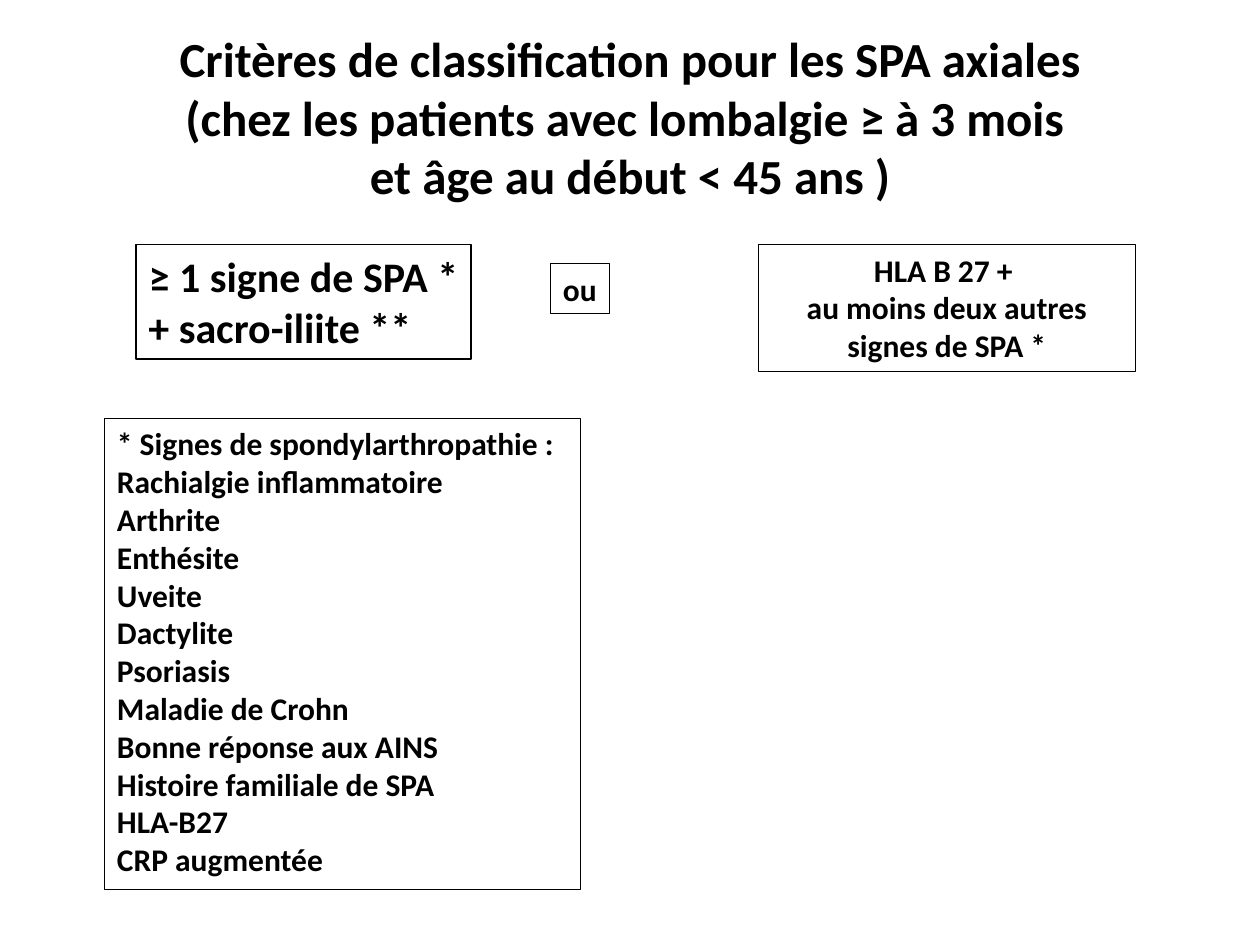
"""Build the slide on classification criteria for axial SPA."""
from pptx import Presentation
from pptx.dml.color import RGBColor
from pptx.enum.shapes import MSO_SHAPE
from pptx.enum.text import MSO_ANCHOR, MSO_AUTO_SIZE, PP_ALIGN
from pptx.util import Inches, Pt

BLACK = RGBColor(0, 0, 0)
LEFT, CENTER = PP_ALIGN.LEFT, PP_ALIGN.CENTER


def format_paragraph(p, size, align):
    p.alignment = align
    p.font.name = "Calibri"
    p.font.size = Pt(size)
    p.font.bold = True
    p.font.color.rgb = BLACK


prs = Presentation()
prs.slide_width, prs.slide_height = Inches(10), Inches(7.5)
s = prs.slides.add_slide(prs.slide_layouts[5])

title = s.shapes.title
title.left, title.top = Inches(0.5), Inches(0.3)
title.width, title.height = Inches(9), Inches(1.25)
tf = title.text_frame
tf.text = (
    "Critères de classification pour les SPA axiales\v"
    "(chez les patients avec lombalgie ≥ à 3 mois \v"
    "et âge au début < 45 ans )"
)
tf.vertical_anchor = MSO_ANCHOR.MIDDLE
tf.auto_size = MSO_AUTO_SIZE.NONE
format_paragraph(tf.paragraphs[0], 28, CENTER)

signs = [
    "* Signes de spondylarthropathie :",
    "Rachialgie inflammatoire",
    "Arthrite",
    "Enthésite",
    "Uveite",
    "Dactylite",
    "Psoriasis",
    "Maladie de Crohn",
    "Bonne réponse aux AINS",
    "Histoire familiale de SPA",
    "HLA-B27",
    "CRP augmentée",
]
hla = ["HLA B 27 + ", "au moins deux autres", "signes de SPA *"]
boxes = [
    ((1.08, 1.94, 2.66, 0.91), 24, [CENTER, LEFT], True,
     ["≥ 1 signe de SPA *", "+ sacro-iliite **"]),
    ((0.83, 3.32, 3.78, 3.74), 18, [LEFT] * len(signs), True, signs),
    ((6.02, 1.94, 2.99, 1.01), 18, [CENTER] * len(hla), True, hla),
    ((4.37, 2.09, 0.47, 0.4), 18, [LEFT], False, ["ou"]),
]

for position, size, aligns, wrap, lines in boxes:
    sp = s.shapes.add_shape(MSO_SHAPE.RECTANGLE, *map(Inches, position))
    sp.shadow.inherit = False
    sp.fill.background()
    sp.line.color.rgb = BLACK
    sp.line.width = Pt(0.75)
    tf = sp.text_frame
    tf.text = "\n".join(lines)
    tf.word_wrap = wrap
    tf.auto_size = MSO_AUTO_SIZE.SHAPE_TO_FIT_TEXT
    tf.vertical_anchor = MSO_ANCHOR.TOP
    for p, align in zip(tf.paragraphs, aligns):
        format_paragraph(p, size, align)

prs.save("out.pptx")
